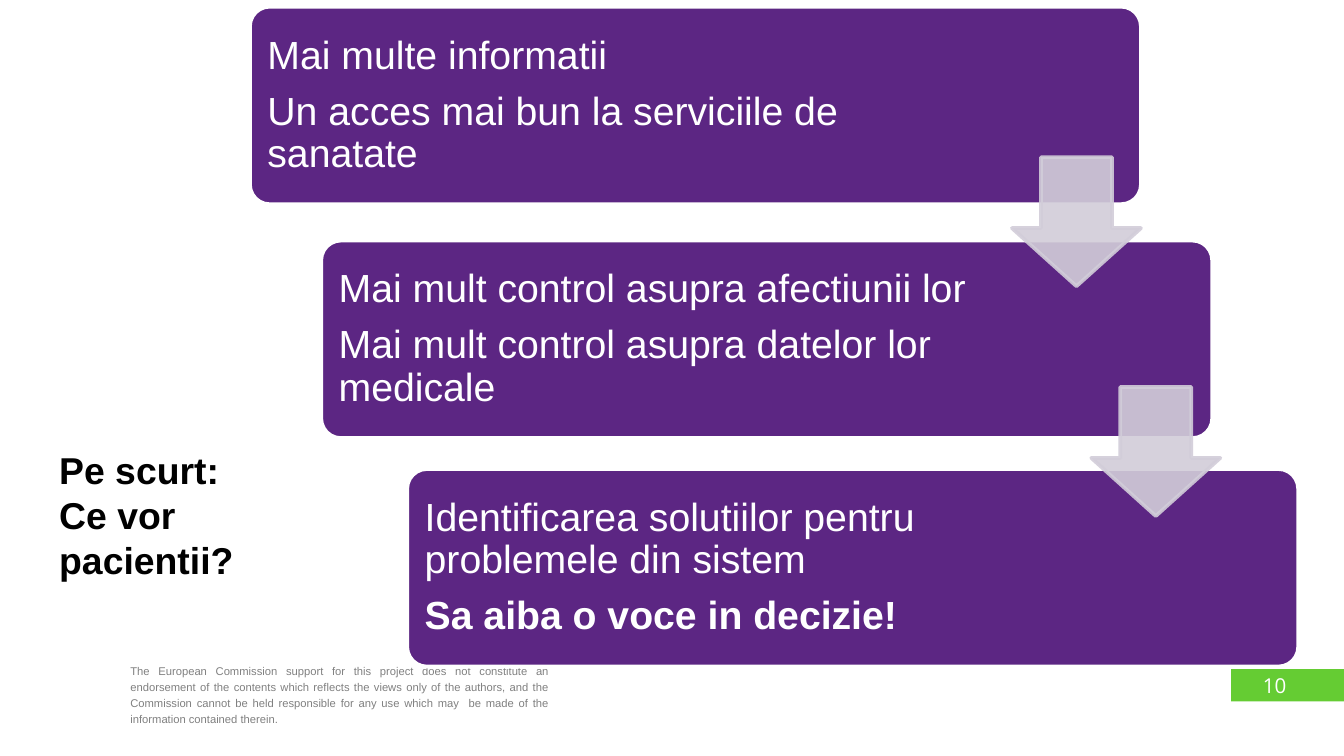
from dataclasses import dataclass

from lxml import etree
from pptx import Presentation
from pptx.dml.color import RGBColor
from pptx.enum.shapes import MSO_SHAPE
from pptx.enum.text import MSO_ANCHOR, MSO_AUTO_SIZE, PP_ALIGN
from pptx.oxml.ns import qn
from pptx.util import Inches, Pt

RECT = MSO_SHAPE.RECTANGLE
ROUND = MSO_SHAPE.ROUNDED_RECTANGLE
DOWN = MSO_SHAPE.DOWN_ARROW
TOP, MIDDLE = MSO_ANCHOR.TOP, MSO_ANCHOR.MIDDLE
LEFT, RIGHT, JUSTIFY = PP_ALIGN.LEFT, PP_ALIGN.RIGHT, PP_ALIGN.JUSTIFY
FIXED = MSO_AUTO_SIZE.NONE

WHITE = RGBColor(0xFF, 0xFF, 0xFF)
BLACK = RGBColor(0x00, 0x00, 0x00)
GRAY = RGBColor(0x80, 0x80, 0x80)
GREEN = RGBColor(0x65, 0xCC, 0x33)
PURPLE = RGBColor(0x5C, 0x26, 0x83)
LILAC = RGBColor(0xD2, 0xCD, 0xD9)

WIDTH = Inches(10)
HEIGHT = WIDTH * 9 // 16
COLS = 1000
CELL = WIDTH // COLS
SIDES = ("margin_left", "margin_top", "margin_right", "margin_bottom")


@dataclass
class Box:
    col: int
    row: int
    wide: int
    high: int

    def place(self) -> tuple:
        return tuple(n * CELL for n in (self.col, self.row, self.wide, self.high))


@dataclass
class Style:
    size: float
    color: RGBColor
    face: str = "Arial"
    bold: bool = False
    align: int = LEFT
    anchor: int = TOP
    pad: tuple = (0.1, 0.05)
    line: float = 1.0
    after: float = 0


@dataclass
class Step:
    col: int
    row: int
    lines: tuple
    strong: bool = False


FOOT = Style(6, GRAY, align=JUSTIFY, pad=(0.07, 0.04), line=1.2)
PAGE = Style(11, WHITE, "Open Sans", align=RIGHT)
HEAD = Style(20, BLACK, bold=True)
BODY = Style(21, WHITE, anchor=MIDDLE, pad=(0.09, 0.09), line=0.9, after=7.35)

NOTICE = ("The European Commission support for this project does not constitute an "
          "endorsement of the contents which reflects the views only of the authors, "
          "and the Commission cannot be held responsible for any use which may  be "
          "made of the information contained therein.")
STEPS = (
    Step(186, 5, ("Mai multe informatii",
                  "Un acces mai bun la serviciile de sanatate")),
    Step(239, 179, ("Mai mult control asupra afectiunii lor",
                    "Mai mult control asupra datelor lor medicale")),
    Step(303, 349, ("Identificarea solutiilor pentru problemele din sistem",
                    "Sa aiba o voce in decizie!"), True),
)
ARROWS = (Box(753, 117, 96, 96), Box(812, 288, 96, 96))


def assign(target, values: dict) -> None:
    for name, value in values.items():
        setattr(target, name, value)


def write(shape, lines: tuple, style: Style) -> None:
    frame = shape.text_frame
    assign(frame, {"word_wrap": True, "auto_size": FIXED,
                   "vertical_anchor": style.anchor})
    assign(frame, dict(zip(SIDES, map(Inches, style.pad * 2))))
    frame.text = "\n".join(lines)
    for para in frame.paragraphs:
        assign(para, {"alignment": style.align, "line_spacing": style.line,
                      "space_before": Pt(0), "space_after": Pt(style.after)})
        for run in para.runs:
            assign(run.font, {"name": style.face, "size": Pt(style.size),
                              "bold": style.bold})
            run.font.color.rgb = style.color


def label(slide, box: Box, lines: tuple, style: Style):
    shape = slide.shapes.add_textbox(*box.place())
    write(shape, lines, style)
    return shape


def block(slide, kind: int, box: Box, fill: RGBColor, edge=None, adjust=()):
    shape = slide.shapes.add_shape(kind, *box.place())
    shape.shadow.inherit = False
    for index, value in enumerate(adjust):
        shape.adjustments[index] = value
    shape.fill.solid()
    shape.fill.fore_color.rgb = fill
    if edge is None:
        shape.line.fill.background()
    else:
        shape.line.color.rgb = edge
        shape.line.width = Pt(2)
    return shape


def fade(shape, share: int) -> None:
    for color in shape.element.spPr.iter(qn("a:srgbClr")):
        etree.SubElement(color, qn("a:alpha")).set("val", str(share * 1000))


def card(slide, step: Step) -> None:
    block(slide, ROUND, Box(step.col, step.row, 663, 147), PURPLE, WHITE, (0.1,))
    text = label(slide, Box(step.col + 4, step.row + 4, 500, 139), step.lines, BODY)
    if step.strong:
        text.text_frame.paragraphs[-1].runs[0].font.bold = True


def main() -> None:
    deck = Presentation()
    assign(deck, {"slide_width": WIDTH, "slide_height": HEIGHT})
    slide = deck.slides.add_slide(deck.slide_layouts[5])

    title = slide.shapes.title
    spot = Box(34, 328, 166, 111).place()
    assign(title, dict(zip(("left", "top", "width", "height"), spot)))
    write(title, ("Pe scurt: Ce vor pacientii?",), HEAD)

    block(slide, RECT, Box(916, 498, 84, 24), GREEN)
    label(slide, Box(90, 488, 325, 59), (NOTICE,), FOOT)
    label(slide, Box(742, 496, 225, 30), ("10",), PAGE)

    for step in STEPS:
        card(slide, step)
    for box in ARROWS:
        fade(block(slide, DOWN, box, LILAC, LILAC, (0.55, 0.45)), 90)

    deck.save("out.pptx")


if __name__ == "__main__":
    main()
